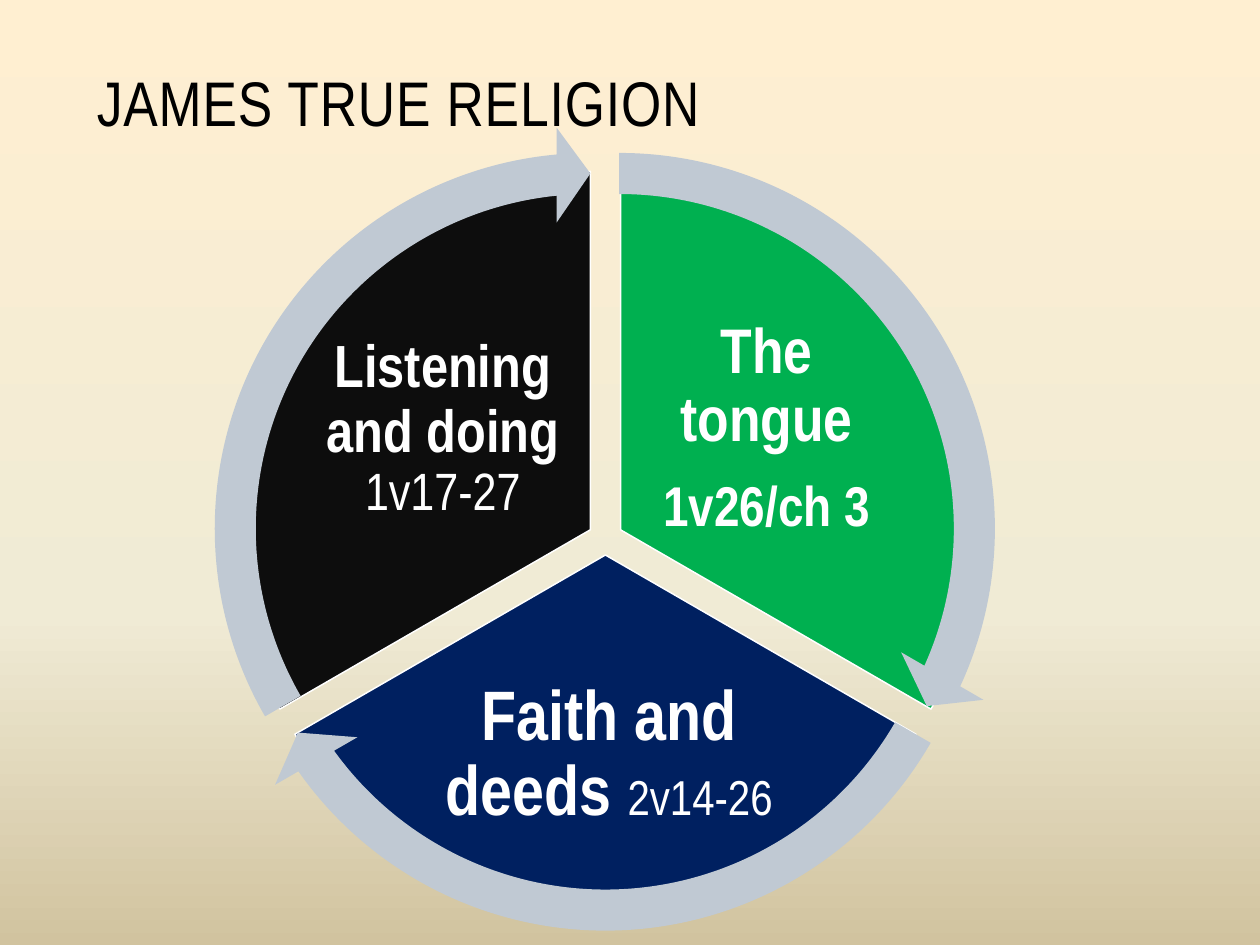
"""Build the three-part cycle slide on true religion in James."""
import copy
from dataclasses import dataclass

import pptx
import pptx.dml.color
import pptx.enum.shapes
import pptx.enum.text
import pptx.oxml.ns
import pptx.util

Inches = pptx.util.Inches
Pt = pptx.util.Pt
Shape = pptx.enum.shapes.MSO_SHAPE
Align = pptx.enum.text.PP_ALIGN
Anchor = pptx.enum.text.MSO_ANCHOR

FONT = "Arial Narrow"
PIE = 5.69
RING = 6.39
COLORS = {
    "black": "000000", "white": "FFFFFF", "green": "00B050", "navy": "002060",
    "coal": "0D0D0D", "arrow": "C0C9D3",
    "top": "FFEFD1", "mid": "F0EBD5", "base": "D1C39F",
}


@dataclass
class Run:
    text: str
    size: float
    bold: bool = True


@dataclass
class Sector:
    fill: str
    pie: tuple[float, float]
    angles: tuple[float, float]
    box: tuple[float, float, float, float]
    inset: float
    paras: list[list[Run]]
    ring: tuple[float, float]
    sweep: tuple[float, float]


SECTORS = [
    Sector("green", (2.08, 1.36), (162, 18), (5.07, 2.56, 2.03, 1.69), 0.05,
           [[Run("The tongue", 36)], [Run("1v26/ch 3", 32)]],
           (1.72, 1), (14.725, 161.994)),
    Sector("navy", (1.96, 1.56), (18, 90), (3.31, 5.25, 3.05, 1.49), 0.06,
           [[Run("Faith and deeds ", 40), Run("2v14-26", 28, False)]],
           (1.61, 1.21), (86.72, 18.005)),
    Sector("coal", (1.84, 1.36), (90, 162), (2.5, 2.56, 2.03, 1.69), 0.05,
           [[Run("Listening and doing ", 34), Run("1v17-27", 30, False)]],
           (1.49, 1), (158.73, 90)),
]


def rgb(name: str) -> pptx.dml.color.RGBColor:
    """Return the named colour."""
    return pptx.dml.color.RGBColor.from_string(COLORS[name])


def add_back(slide) -> None:
    """Fill the background with a three-stop vertical gradient."""
    fill = slide.background.fill
    fill.gradient()
    fill.gradient_angle = 270
    stops = next(slide.element.iter(pptx.oxml.ns.qn("a:gsLst")))
    stops.append(copy.deepcopy(stops[0]))
    tints = [(0, "top"), (0.65, "mid"), (1, "base")]
    for stop, (place, name) in zip(fill.gradient_stops, tints):
        stop.position = place
        stop.color.rgb = rgb(name)


def add_frame(slide, box: tuple, anchor):
    """Add a wrapping text box and return its frame."""
    frame = slide.shapes.add_textbox(*map(Inches, box)).text_frame
    frame.word_wrap = True
    frame.vertical_anchor = anchor
    return frame


def add_run(para, item: Run, color: str):
    """Add one styled run to a paragraph."""
    run = para.add_run()
    run.text = item.text
    run.font.name = FONT
    run.font.size = Pt(item.size)
    run.font.bold = item.bold
    run.font.color.rgb = rgb(color)
    return run


def add_round(slide, kind, place: tuple, size: float, fill: str, adjust: tuple):
    """Add a square-framed preset shape with its adjustments."""
    shape = slide.shapes.add_shape(kind, *map(Inches, (*place, size, size)))
    shape.shadow.inherit = False
    for index, value in enumerate(adjust):
        shape.adjustments[index] = value
    shape.fill.solid()
    shape.fill.fore_color.rgb = rgb(fill)
    return shape


def add_label(slide, part: Sector) -> None:
    """Write the centred label of a sector."""
    frame = add_frame(slide, part.box, Anchor.MIDDLE)
    frame.margin_left = frame.margin_right = Inches(part.inset)
    frame.margin_top = frame.margin_bottom = Inches(part.inset)
    for index, runs in enumerate(part.paras):
        para = frame.add_paragraph() if index else frame.paragraphs[0]
        para.alignment = Align.CENTER
        para.line_spacing = 0.9
        para.space_after = Pt(13)
        for item in runs:
            add_run(para, item, "white")


def main() -> None:
    """Build and save the slide."""
    deck = pptx.Presentation()
    deck.slide_width, deck.slide_height = Inches(10), Inches(7.5)
    slide = deck.slides.add_slide(deck.slide_layouts[6])
    add_back(slide)
    title = add_frame(slide, (0.67, 0.3, 8.67, 0.85), Anchor.BOTTOM)
    head = add_run(title.paragraphs[0], Run("JAMES TRUE RELIGION", 36, False), "black")
    head.font._element.set("spc", "50")
    for part in SECTORS:
        pie = add_round(slide, Shape.PIE, part.pie, PIE, part.fill, part.angles)
        pie.line.color.rgb = rgb("white")
        pie.line.width = Pt(0.85)
        add_label(slide, part)
    for part in SECTORS:
        adjust = (0.051, 3.275, *part.sweep, 0.059)
        ring = add_round(slide, Shape.CIRCULAR_ARROW, part.ring, RING, "arrow", adjust)
        ring.line.fill.background()
    deck.save("out.pptx")


if __name__ == "__main__":
    main()
